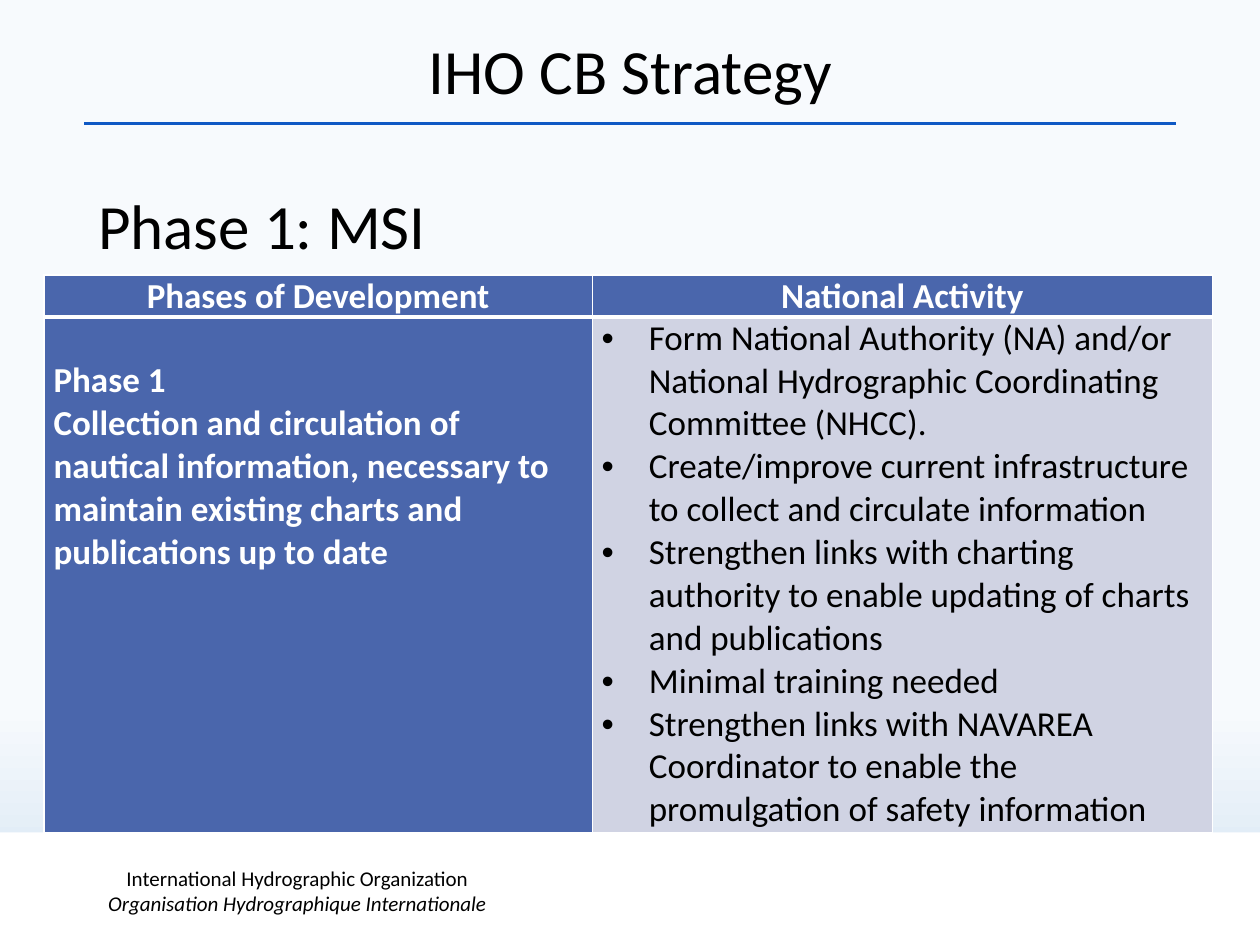
from lxml import etree
from pptx import Presentation
from pptx.dml.color import RGBColor
from pptx.enum.shapes import MSO_CONNECTOR, MSO_SHAPE
from pptx.enum.text import MSO_ANCHOR, PP_ALIGN
from pptx.oxml.ns import qn
from pptx.util import Cm, Pt

LEFT, MID = PP_ALIGN.LEFT, PP_ALIGN.CENTER
TOP, CENTER, BOTTOM = MSO_ANCHOR.TOP, MSO_ANCHOR.MIDDLE, MSO_ANCHOR.BOTTOM
STRAIGHT, RECT = MSO_CONNECTOR.STRAIGHT, MSO_SHAPE.RECTANGLE

BLACK = RGBColor(0x00, 0x00, 0x00)
WHITE = RGBColor(0xFF, 0xFF, 0xFF)
BLUE = RGBColor(0x0E, 0x58, 0xC4)
NAVY = RGBColor(0x4A, 0x66, 0xAC)
GREY = RGBColor(0xD0, 0xD3, 0xE3)
PALE = RGBColor(0xF7, 0xFA, 0xFD)
SKY = RGBColor(0xD0, 0xE2, 0xF1)

TITLE = "IHO CB Strategy"
LEAD = "Phase 1: MSI"
FOOTER = [
    ("International Hydrographic Organization", False),
    ("Organisation Hydrographique Internationale", True),
]
HEADS = ["Phases of Development", "National Activity"]
PHASE = [
    "Phase 1",
    "Collection and circulation of nautical information, necessary to "
    "maintain existing charts and publications up to date",
]
TASKS = [
    "Form National Authority (NA) and/or National Hydrographic "
    "Coordinating Committee (NHCC).",
    "Create/improve current infrastructure to collect and circulate information",
    "Strengthen links with charting authority to enable updating of charts "
    "and publications",
    "Minimal training needed",
    "Strengthen links with NAVAREA Coordinator to enable the promulgation "
    "of safety information",
]
WIDTHS = [11.05, 12.5]
HEIGHTS = [0.84, 10.4]
INDENT = Cm(0.95)


def write(frame, text, size=20, color=BLACK, bold=False, italic=False,
          align=LEFT, space=None, bullet=False):
    para = frame.paragraphs[0]
    if para.runs:
        para = frame.add_paragraph()
    if bullet:
        props = para._p.get_or_add_pPr()
        props.set("marL", str(INDENT))
        props.set("indent", str(-INDENT))
        etree.SubElement(props, qn("a:buFont"), typeface="Arial")
        etree.SubElement(props, qn("a:buChar"), char="•")
        tabs = etree.SubElement(props, qn("a:tabLst"))
        etree.SubElement(tabs, qn("a:tab"), pos=str(Cm(1.27)), algn="l")
    para.alignment = align
    if space:
        para.line_spacing = space
    run = para.add_run()
    run.text = text
    font = run.font
    font.name, font.size = "Calibri", Pt(size)
    font.bold, font.italic = bold, italic
    font.color.rgb = color


def box(slide, left, top, width, height, anchor):
    frame = slide.shapes.add_textbox(
        Cm(left), Cm(top), Cm(width), Cm(height)).text_frame
    frame.word_wrap = True
    frame.vertical_anchor = anchor
    return frame


def edge(cell, **sides):
    props = cell._tc.get_or_add_tcPr()
    for side in "LRTB":
        line = etree.SubElement(
            props, qn(f"a:ln{side}"), w=str(Pt(sides.get(side, 1))))
        fill = etree.SubElement(line, qn("a:solidFill"))
        etree.SubElement(fill, qn("a:srgbClr"), val=str(WHITE))


def backdrop(slide):
    fill = slide.background.fill
    fill.gradient()
    fill.gradient_angle = 270
    for stop, (place, color) in zip(fill.gradient_stops, [(0.75, PALE), (1, SKY)]):
        stop.position = place
        stop.color.rgb = color

    rule = slide.shapes.add_connector(
        STRAIGHT, Cm(1.7), Cm(2.49), Cm(23.7), Cm(2.49))
    rule.line.color.rgb = BLUE
    rule.line.width = Pt(2.25)
    etree.SubElement(rule._element.spPr, qn("a:effectLst"))

    band = slide.shapes.add_shape(RECT, 0, Cm(16.78), Cm(25.4), Cm(2.34))
    band.shadow.inherit = False
    band.fill.solid()
    band.fill.fore_color.rgb = WHITE
    band.line.fill.background()


def grid(slide):
    table = slide.shapes.add_table(
        2, 2, Cm(0.89), Cm(5.54), Cm(sum(WIDTHS)), Cm(sum(HEIGHTS))).table
    table.horz_banding = False
    for col, width in zip(table.columns, WIDTHS):
        col.width = Cm(width)
    for row, height in zip(table.rows, HEIGHTS):
        row.height = Cm(height)
    for cell in table.iter_cells():
        cell.margin_left = cell.margin_right = Cm(0.19)
        cell.margin_top = cell.margin_bottom = 0

    for col, head in enumerate(HEADS):
        top, body = table.cell(0, col), table.cell(1, col)
        edge(top, B=3)
        edge(body, T=3)
        for cell, color in [(top, NAVY), (body, [NAVY, GREY][col])]:
            cell.fill.solid()
            cell.fill.fore_color.rgb = color
        write(top.text_frame, head, color=WHITE, bold=True, align=MID)

    phase, tasks = table.cell(1, 0), table.cell(1, 1)
    phase.margin_top = Cm(0.86)
    for text in PHASE:
        write(phase.text_frame, text, color=WHITE, bold=True)
    for text in TASKS:
        write(tasks.text_frame, text, bullet=True)


def main():
    deck = Presentation()
    deck.slide_width, deck.slide_height = Cm(25.4), Cm(19.05)
    slide = deck.slides.add_slide(deck.slide_layouts[6])
    backdrop(slide)

    foot = box(slide, 1.7, 17.45, 8.59, 1.02, CENTER)
    foot.margin_left = foot.margin_right = 0
    foot.margin_top = foot.margin_bottom = 0
    for text, slant in FOOTER:
        write(foot, text, size=12, italic=slant, align=MID)

    write(box(slide, 1.73, 3.81, 22.02, 12.65, TOP), LEAD, size=36, space=0.9)
    write(box(slide, 1.73, 0.53, 21.95, 1.78, BOTTOM), TITLE,
          size=36, align=MID, space=0.9)
    grid(slide)
    deck.save("out.pptx")


if __name__ == "__main__":
    main()
